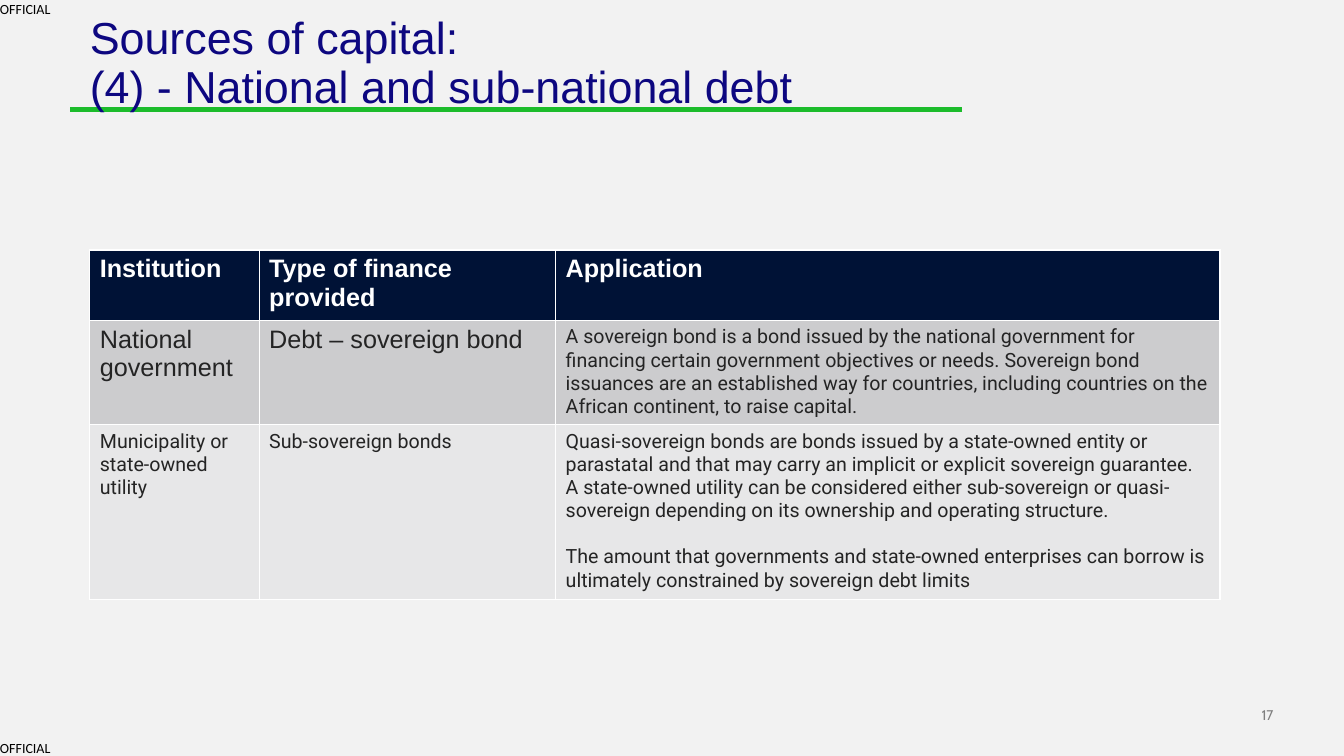
from dataclasses import dataclass

from pptx import Presentation
from pptx import util as u
from pptx.dml.color import RGBColor
from pptx.enum import text

WIDE, HIGH = u.Inches(13.33), u.Inches(7.5)
LEFT = 6.68
COLS = (12.6, 22.06, 49.44)
ROW = 5.47
GAP = 16.4


@dataclass(frozen=True)
class Font:
    name: str
    size: float
    color: str
    bold: bool = False


@dataclass(frozen=True)
class Box:
    """Left, top, width and height in percent of the slide's size."""
    left: float
    top: float
    width: float
    height: float

    def emu(self) -> tuple:
        return across(self.left), down(self.top), across(self.width), down(self.height)


@dataclass(frozen=True)
class Label:
    words: str
    box: Box
    font: Font
    align: int = text.PP_ALIGN.LEFT
    anchor: int = text.MSO_ANCHOR.TOP


@dataclass(frozen=True)
class Row:
    fill: str
    fonts: tuple
    cells: tuple


HEAD = Font("Arial", 18, "FFFFFF", True)
LARGE = Font("Arial", 18, "242424")
SMALL = Font("Roboto", 14, "242424")
MARK = Font("Calibri", 10, "000000")
PAGE = Font("Cabin", 10, "7F7F7F")
TITLE = Font("Arial", 32, "0D0780")

BAR = Box(5.25, 14.27, 66.32, 0.53)
LABELS = (
    Label("17", Box(91.6, 93.4, 3.15, 2.27), PAGE,
          text.PP_ALIGN.RIGHT, text.MSO_ANCHOR.BOTTOM),
    Label("OFFICIAL", Box(0, 97.8, 3.98, 2.2), MARK),
    Label("OFFICIAL", Box(0, 0, 3.98, 2.2), MARK),
)

ROWS = (
    Row("001236", (HEAD, HEAD, HEAD),
        ("Institution", "Type of finance provided", "Application")),
    Row("CCCCCE", (LARGE, LARGE, SMALL),
        ("National government", "Debt – sovereign bond",
         "A sovereign bond is a bond issued by the national government for "
         "financing certain government objectives or needs. Sovereign bond "
         "issuances are an established way for countries, including countries "
         "on the African continent, to raise capital.")),
    Row("E7E7E8", (SMALL, SMALL, SMALL),
        ("Municipality or state-owned utility", "Sub-sovereign bonds",
         "Quasi-sovereign bonds are bonds issued by a state-owned entity or "
         "parastatal and that may carry an implicit or explicit sovereign "
         "guarantee. A state-owned utility can be considered either "
         "sub-sovereign or quasi-sovereign depending on its ownership and "
         "operating structure.\n"
         "The amount that governments and state-owned enterprises can borrow "
         "is ultimately constrained by sovereign debt limits")),
)


def across(share: float) -> int:
    return round(WIDE * share / 100)


def down(share: float) -> int:
    return round(HIGH * share / 100)


def paint(target, color: str) -> None:
    """Give a fill one solid colour."""
    target.solid()
    target.fore_color.rgb = RGBColor.from_string(color)


def style(frame, font: Font, align: int = text.PP_ALIGN.LEFT) -> None:
    for para in frame.paragraphs:
        para.alignment = align
        for run in para.runs:
            run.font.name = font.name
            run.font.size = u.Pt(font.size)
            run.font.bold = font.bold
            paint(run.font.fill, font.color)


def trim(frame) -> None:
    """Wrap the text and take away the frame's insets."""
    frame.word_wrap = True
    frame.margin_left = frame.margin_right = 0
    frame.margin_top = frame.margin_bottom = 0


def add_label(slide, label: Label) -> None:
    frame = slide.shapes.add_textbox(*label.box.emu()).text_frame
    trim(frame)
    frame.vertical_anchor = label.anchor
    frame.text = label.words
    style(frame, label.font, label.align)


def add_bar(slide) -> None:
    """Draw the green rule behind the title."""
    left, top, width, height = BAR.emu()
    right, base = left + width, top + height
    path = slide.shapes.build_freeform(left, top)
    path.add_line_segments([(right, top), (right, base), (left, base)], close=True)
    bar = path.convert_to_shape()
    bar.shadow.inherit = False
    paint(bar.fill, "1CBC2B")
    paint(bar.line.fill, "1CBC2B")
    bar.line.width = u.Pt(0.01)
    slide.shapes.title.element.addprevious(bar.element)


def set_title(slide) -> None:
    title = slide.shapes.title
    title.left, title.top, title.width, title.height = Box(LEFT, 2.13, 66.47, 19.33).emu()
    frame = title.text_frame
    trim(frame)
    frame.auto_size = text.MSO_AUTO_SIZE.NONE
    frame.vertical_anchor = text.MSO_ANCHOR.TOP
    frame.text = "Sources of capital:\v(4) - National and sub-national debt"
    frame.paragraphs[0].line_spacing = 0.9
    style(frame, TITLE)


def add_grid(slide) -> None:
    """Add the table; its style brings the white borders."""
    box = Box(LEFT, 33.07, sum(COLS), ROW * len(ROWS))
    table = slide.shapes.add_table(len(ROWS), len(COLS), *box.emu()).table
    for col, share in zip(table.columns, COLS):
        col.width = across(share)
    for line, row in zip(table.rows, ROWS):
        for cell, words, font in zip(line.cells, row.cells, row.fonts):
            paint(cell.fill, row.fill)
            cell.text_frame.text = words
            style(cell.text_frame, font)
            for para in cell.text_frame.paragraphs[1:]:
                para.space_before = u.Pt(GAP)


def main() -> None:
    deck = Presentation()
    deck.slide_width, deck.slide_height = WIDE, HIGH
    slide = deck.slides.add_slide(deck.slide_layouts[5])
    paint(slide.background.fill, "F2F2F2")
    set_title(slide)
    add_bar(slide)
    for label in LABELS:
        add_label(slide, label)
    add_grid(slide)
    deck.save("out.pptx")


if __name__ == "__main__":
    main()
